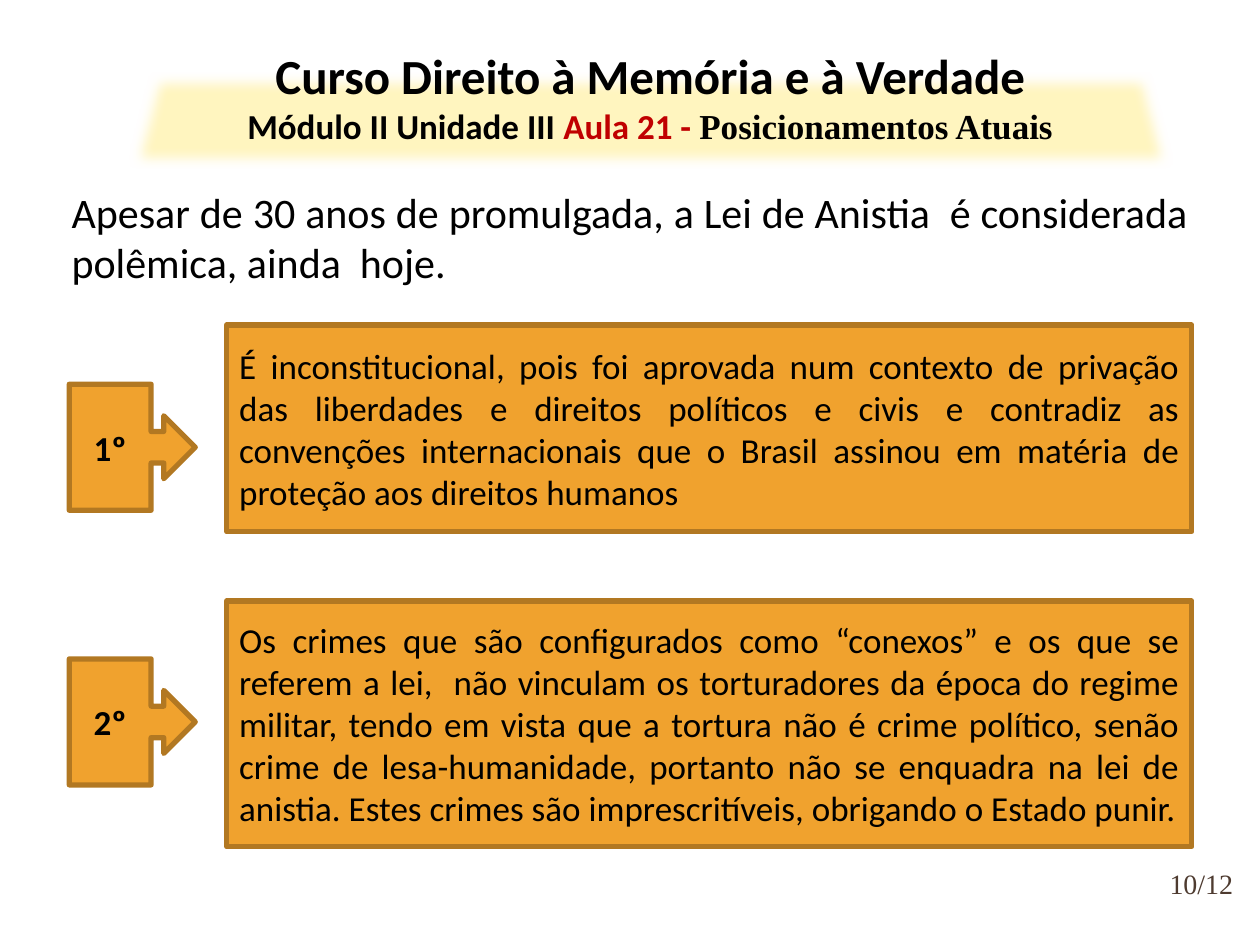
"""Build the slide on current positions about the amnesty law."""
from dataclasses import dataclass

from lxml.etree import SubElement
from pptx import Presentation
from pptx.dml.color import RGBColor
from pptx.enum.shapes import MSO_SHAPE
from pptx.enum.text import MSO_ANCHOR, MSO_AUTO_SIZE, PP_ALIGN
from pptx.oxml.ns import qn
from pptx.shapes.autoshape import Shape
from pptx.slide import Slide
from pptx.text.text import TextFrame, _Paragraph
from pptx.util import Inches, Pt

ORANGE = "F0A22E"
BROWN = "B27822"
YELLOW = "FFF5BF"
BLACK = "000000"
RED = "C00000"
SERIF = "Times New Roman"


@dataclass(frozen=True)
class Position:
    """An ordinal label and the argument it points to."""
    ordinal: str
    argument: str
    callout_top: float
    box_top: float
    box_height: float


POSITIONS = [
    Position("1º", "É inconstitucional, pois foi aprovada num contexto de privação das "
             "liberdades e direitos políticos e civis e contradiz as convenções "
             "internacionais que o Brasil assinou em matéria de proteção aos direitos humanos",
             3.05, 2.58, 1.64),
    Position("2º", "Os crimes que são configurados como “conexos” e os que se referem a lei, "
             " não vinculam os torturadores da época do regime militar, tendo em vista que a "
             "tortura não é crime político, senão crime de lesa-humanidade, portanto não se "
             "enquadra na lei de anistia. Estes crimes são imprescritíveis, obrigando o "
             "Estado punir.",
             5.23, 4.77, 1.95),
]


def color(value: str) -> RGBColor:
    """Turn a hex string into a colour."""
    return RGBColor.from_string(value)


def write(paragraph: _Paragraph, text: str, *, size: float = 20, bold: bool = False,
          font: str = "Calibri", ink: str = BLACK,
          align: PP_ALIGN = PP_ALIGN.CENTER) -> None:
    """Add one formatted run to a paragraph."""
    paragraph.alignment = align
    run = paragraph.add_run()
    run.text = text
    run.font.size = Pt(size)
    run.font.bold = bold
    run.font.name = font
    run.font.color.rgb = color(ink)


def add_block(slide: Slide, kind: MSO_SHAPE, left: float, top: float,
              width: float, height: float) -> Shape:
    """Add an orange outlined shape ready for text."""
    shape = slide.shapes.add_shape(kind, Inches(left), Inches(top), Inches(width), Inches(height))
    shape.shadow.inherit = False
    shape.fill.solid()
    shape.fill.fore_color.rgb = color(ORANGE)
    shape.line.color.rgb = color(BROWN)
    shape.line.width = Pt(3)
    shape.text_frame.word_wrap = True
    shape.text_frame.vertical_anchor = MSO_ANCHOR.MIDDLE
    return shape


def add_position(slide: Slide, position: Position) -> None:
    """Draw an ordinal callout and its argument box."""
    callout = add_block(slide, MSO_SHAPE.RIGHT_ARROW_CALLOUT, 0.55, position.callout_top, 1, 1)
    write(callout.text_frame.paragraphs[0], position.ordinal, bold=True)
    box = add_block(slide, MSO_SHAPE.RECTANGLE, 1.8, position.box_top, 7.66, position.box_height)
    write(box.text_frame.paragraphs[0], position.argument, align=PP_ALIGN.JUSTIFY)


def add_text_box(slide: Slide, left: float, top: float, width: float, height: float) -> TextFrame:
    """Add a wrapping text box and return its text frame."""
    box = slide.shapes.add_textbox(Inches(left), Inches(top), Inches(width), Inches(height))
    box.text_frame.word_wrap = True
    return box.text_frame


def add_title_band(slide: Slide) -> None:
    """Draw the soft yellow band behind the title."""
    band = slide.shapes.add_shape(MSO_SHAPE.TRAPEZOID, Inches(0.98), Inches(0.58),
                                  Inches(8.36), Inches(0.76))
    band.adjustments[0] = 0.26
    band.fill.solid()
    band.fill.fore_color.rgb = color(YELLOW)
    band.line.fill.background()
    band.shadow.inherit = False
    effects = band.element.spPr.find(qn("a:effectLst"))
    SubElement(effects, qn("a:softEdge"), rad=str(Inches(0.1)))


def fill_title(slide: Slide) -> None:
    """Place the title in front of its band and write both lines."""
    title = slide.shapes.title
    title.left, title.top = Inches(1.02), Inches(0.31)
    title.width, title.height = Inches(8.28), Inches(1.25)
    slide.shapes.element.append(title.element)
    frame = title.text_frame
    frame.auto_size = MSO_AUTO_SIZE.NONE
    frame.vertical_anchor = MSO_ANCHOR.TOP
    write(frame.paragraphs[0], "Curso Direito à Memória e à Verdade", size=28, bold=True)
    subtitle = frame.add_paragraph()
    write(subtitle, "Módulo II Unidade III ", bold=True)
    write(subtitle, "Aula 21 - ", bold=True, ink=RED)
    write(subtitle, "Posicionamentos Atuais", bold=True, font=SERIF)


def main() -> None:
    """Build and save the presentation."""
    presentation = Presentation()
    presentation.slide_width, presentation.slide_height = Inches(10), Inches(7.5)
    slide = presentation.slides.add_slide(presentation.slide_layouts[5])

    page = add_text_box(slide, 9.2, 6.76, 0.67, 0.5)
    page.margin_left = page.margin_right = page.margin_top = page.margin_bottom = 0
    page.vertical_anchor = MSO_ANCHOR.MIDDLE
    write(page.paragraphs[0], "10/12", size=16, font=SERIF, ink="4E3B30")

    introduction = add_text_box(slide, 0.47, 1.43, 9.06, 0.91)
    write(introduction.paragraphs[0],
          "Apesar de 30 anos de promulgada, a Lei de Anistia  é considerada polêmica, "
          "ainda  hoje.", size=24, align=PP_ALIGN.JUSTIFY)

    for position in POSITIONS:
        add_position(slide, position)
    add_title_band(slide)
    fill_title(slide)
    presentation.save("out.pptx")


if __name__ == "__main__":
    main()
